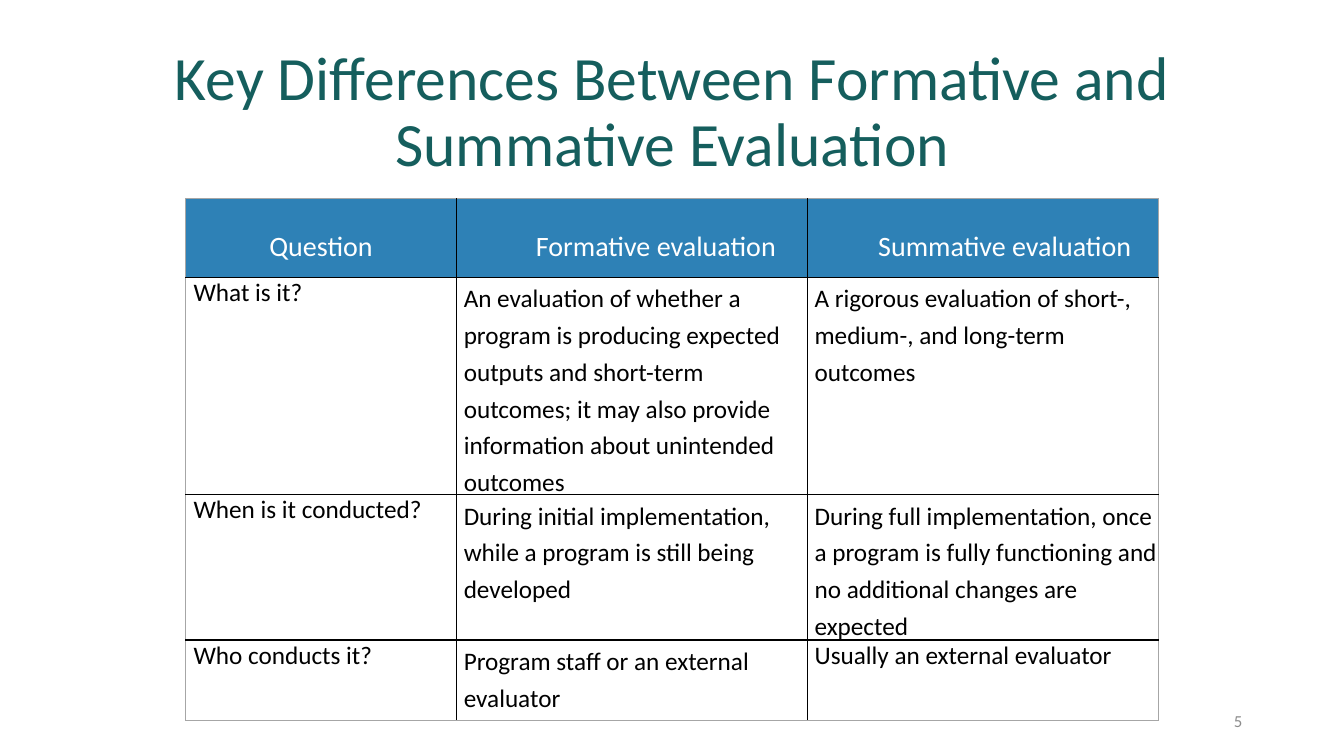
from dataclasses import dataclass

import pptx
import pptx.dml.color
import pptx.enum.text
import pptx.oxml
import pptx.oxml.ns
import pptx.util

PX = 9144  # EMU per px, 100 px to the inch
ALIGN = pptx.enum.text.PP_ALIGN
ANCHOR = pptx.enum.text.MSO_ANCHOR


@dataclass(frozen=True)
class Theme:
    font: str = "Calibri"
    title: str = "155E5D"
    header_fill: str = "2E81B6"
    header_text: str = "FFFFFF"
    body_fill: str = "FFFFFF"
    body_text: str = "000000"
    inner_line: str = "000000"
    outer_line: str = "A6A6A6"
    page: str = "8C8C8C"
    title_size: int = 44
    header_size: int = 20
    body_size: int = 18
    page_size: int = 12
    inner_width: float = 1
    outer_width: float = 0.5


@dataclass(frozen=True)
class Entry:
    text: str
    indent: int = 7
    spacing: float = 1.2


@dataclass(frozen=True)
class Box:
    left: int
    top: int
    width: int
    height: int

    def emu(self) -> tuple[int, ...]:
        return tuple(n * PX for n in (self.left, self.top, self.width, self.height))


THEME = Theme()
TITLE_BOX = Box(92, 40, 1150, 145)
PAGE_BOX = Box(942, 695, 300, 40)
TABLE_BOX = Box(184, 197, 965, 441)
COLUMN_WIDTHS = (269, 348, 348)
ROW_HEIGHTS = (78, 173, 110, 80)
HEADER_TOP_MARGIN = 31

ROWS = (
    (
        Entry("Question", 0, 1),
        Entry("Formative evaluation", 47, 1),
        Entry("Summative evaluation", 43, 1),
    ),
    (
        Entry("What is it?", 8, 1),
        Entry("An evaluation of whether a program is producing expected outputs and "
              "short-term outcomes; it may also provide information about unintended outcomes"),
        Entry("A rigorous evaluation of short-, medium-, and long-term outcomes"),
    ),
    (
        Entry("When is it conducted?", 8, 1),
        Entry("During initial implementation, while a program is still being developed"),
        Entry("During full implementation, once a program is fully functioning and no "
              "additional changes are expected"),
    ),
    (
        Entry("Who conducts it?", 8, 1),
        Entry("Program staff or an external evaluator"),
        Entry("Usually an external evaluator", 7, 1),
    ),
)


def write(frame, text: str, size: int, color: str, align, spacing: float = 1.0) -> None:
    frame.text = text
    frame.word_wrap = True
    paragraph = frame.paragraphs[0]
    paragraph.alignment = align
    paragraph.line_spacing = spacing
    paragraph.font.name = THEME.font
    paragraph.font.size = pptx.util.Pt(size)
    paragraph.font.color.rgb = pptx.dml.color.RGBColor.from_string(color)


def set_borders(cell, outer_sides: set[str]) -> None:
    """Give outer sides the pale line and the others the inner grid line."""
    properties = cell._tc.get_or_add_tcPr()
    for index, side in enumerate(("lnL", "lnR", "lnT", "lnB")):
        outer = side in outer_sides
        color = THEME.outer_line if outer else THEME.inner_line
        width = pptx.util.Pt(THEME.outer_width if outer else THEME.inner_width)
        line = pptx.oxml.parse_xml(
            f'<a:{side} {pptx.oxml.ns.nsdecls("a")} w="{width}">'
            f'<a:solidFill><a:srgbClr val="{color}"/></a:solidFill></a:{side}>'
        )
        properties.insert(index, line)


def fill_cell(cell, entry: Entry, header: bool) -> None:
    cell.margin_left = entry.indent * PX
    cell.margin_right = cell.margin_bottom = 0
    cell.margin_top = HEADER_TOP_MARGIN * PX if header else 0
    cell.vertical_anchor = ANCHOR.TOP
    cell.fill.solid()
    fill = THEME.header_fill if header else THEME.body_fill
    cell.fill.fore_color.rgb = pptx.dml.color.RGBColor.from_string(fill)
    write(
        cell.text_frame,
        entry.text,
        THEME.header_size if header else THEME.body_size,
        THEME.header_text if header else THEME.body_text,
        ALIGN.CENTER if header else ALIGN.LEFT,
        entry.spacing,
    )


def add_comparison(slide) -> None:
    table = slide.shapes.add_table(len(ROWS), len(COLUMN_WIDTHS), *TABLE_BOX.emu()).table
    table.first_row = table.horz_banding = False
    for column, width in zip(table.columns, COLUMN_WIDTHS):
        column.width = width * PX
    for row, height in zip(table.rows, ROW_HEIGHTS):
        row.height = height * PX
    last_row, last_column = len(ROWS) - 1, len(COLUMN_WIDTHS) - 1
    for r, entries in enumerate(ROWS):
        for c, entry in enumerate(entries):
            edges = {"lnL": c == 0, "lnR": c == last_column, "lnT": r == 0, "lnB": r == last_row}
            cell = table.cell(r, c)
            fill_cell(cell, entry, header=r == 0)
            set_borders(cell, {side for side, outer in edges.items() if outer})


def add_title(slide) -> None:
    title = slide.shapes.title
    title.left, title.top, title.width, title.height = TITLE_BOX.emu()
    frame = title.text_frame
    write(frame, "Key Differences Between Formative and Summative Evaluation",
          THEME.title_size, THEME.title, ALIGN.CENTER, 0.9)
    frame.auto_size = pptx.enum.text.MSO_AUTO_SIZE.NONE
    frame.vertical_anchor = ANCHOR.MIDDLE


def add_page_number(slide) -> None:
    frame = slide.shapes.add_textbox(*PAGE_BOX.emu()).text_frame
    write(frame, "5", THEME.page_size, THEME.page, ALIGN.RIGHT)
    frame.vertical_anchor = ANCHOR.MIDDLE


def main() -> None:
    deck = pptx.Presentation()
    deck.slide_width, deck.slide_height = 1333 * PX, 750 * PX
    slide = deck.slides.add_slide(deck.slide_layouts.get_by_name("Title Only"))
    add_title(slide)
    add_page_number(slide)
    add_comparison(slide)
    deck.save("out.pptx")


if __name__ == "__main__":
    main()
